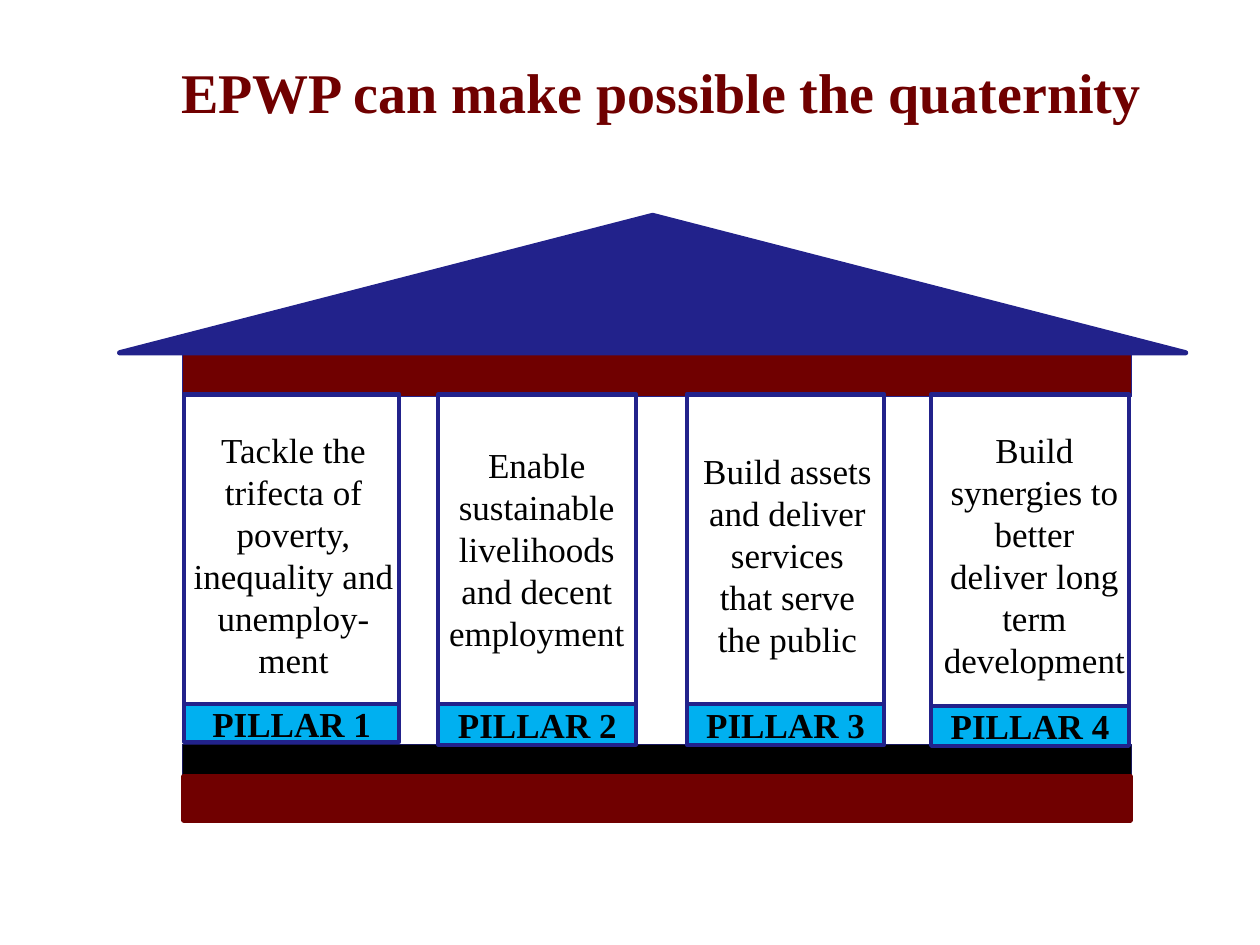
from pptx import Presentation
from pptx.dml.color import RGBColor
from pptx.enum.shapes import MSO_SHAPE
from pptx.enum.text import MSO_ANCHOR, PP_ALIGN
from pptx.util import Inches, Pt

COLORS = {
    "maroon": "700000",
    "navy": "22228B",
    "dark_navy": "17175C",
    "sky": "00B0F0",
    "black": "000000",
}
FONT = "Times New Roman"

PILLARS = [
    ("Tackle the trifecta of poverty, inequality and unemploy-ment",
     (1.46, 3.13, 1.71, 2.64), (1.38, 3.34, 1.9, 2.12), (5.59, 0.3)),
    ("Enable sustainable livelihoods and decent employment",
     (3.48, 3.13, 1.57, 2.64), (3.44, 3.46, 1.64, 1.78), (5.59, 0.32)),
    ("Build assets and deliver services that serve the public",
     (5.45, 3.13, 1.57, 2.64), (5.47, 3.51, 1.56, 1.78), (5.59, 0.32)),
    ("Build synergies to better deliver long term development",
     (7.39, 3.13, 1.57, 2.64), (7.38, 3.34, 1.66, 2.12), (5.6, 0.32)),
]


def color(name):
    return RGBColor.from_string(COLORS[name])


def add_block(slide, box, fill, line, width, kind=MSO_SHAPE.RECTANGLE):
    block = slide.shapes.add_shape(kind, *map(Inches, box))
    block.shadow.inherit = False
    if fill:
        block.fill.solid()
        block.fill.fore_color.rgb = color(fill)
    else:
        block.fill.background()
    block.line.color.rgb = color(line)
    block.line.width = Pt(width)
    return block


def write(holder, text, size, ink="black", bold=False, anchor=MSO_ANCHOR.MIDDLE):
    frame = holder.text_frame
    frame.word_wrap = True
    frame.vertical_anchor = anchor
    frame.text = text
    paragraph = frame.paragraphs[0]
    paragraph.alignment = PP_ALIGN.CENTER
    font = paragraph.runs[0].font
    font.name = FONT
    font.size = Pt(size)
    font.bold = bold
    font.color.rgb = color(ink)


def add_title(slide, box):
    title = slide.shapes.add_textbox(*map(Inches, box))
    write(title, "EPWP can make possible the quaternity", 32, "maroon", True,
          MSO_ANCHOR.BOTTOM)


def add_temple_frame(slide, box):
    left, top, width, height = box
    beam_left, beam_width = left + 0.5, 7.53
    add_block(slide, (beam_left, top + 1.02, beam_width, 0.42), "maroon", "navy", 0)
    add_block(slide, (beam_left, top + 4.2, beam_width, 0.25), "black", "dark_navy", 0)
    add_block(slide, (beam_left + 0.01, top + height - 0.35, 7.51, 0.35),
              "maroon", "maroon", 3)
    add_block(slide, (left, top, width, 1.09), "navy", "navy", 3,
              MSO_SHAPE.ISOSCELES_TRIANGLE)


def add_pillar(slide, box, number, goal, goal_box, base):
    left, _, width, _ = box
    base_top, base_height = base
    add_block(slide, box, None, "navy", 2.25)
    plinth = add_block(slide, (left, base_top, width, base_height),
                       "sky", "navy", 2.25)
    frame = plinth.text_frame
    frame.margin_left = frame.margin_right = Inches(0.07)
    frame.margin_top = frame.margin_bottom = Inches(0.04)
    write(plinth, f"PILLAR {number}", 20, bold=True)
    write(slide.shapes.add_textbox(*map(Inches, goal_box)), goal, 20)


def main():
    presentation = Presentation()
    presentation.slide_width = Inches(10)
    presentation.slide_height = Inches(7.5)
    slide = presentation.slides.add_slide(presentation.slide_layouts[6])
    add_title(slide, (0.94, 0.46, 8.62, 0.58))
    add_temple_frame(slide, (0.95, 1.71, 8.46, 4.8))
    for number, (goal, box, goal_box, base) in enumerate(PILLARS, 1):
        add_pillar(slide, box, number, goal, goal_box, base)
    presentation.save("out.pptx")


if __name__ == "__main__":
    main()
